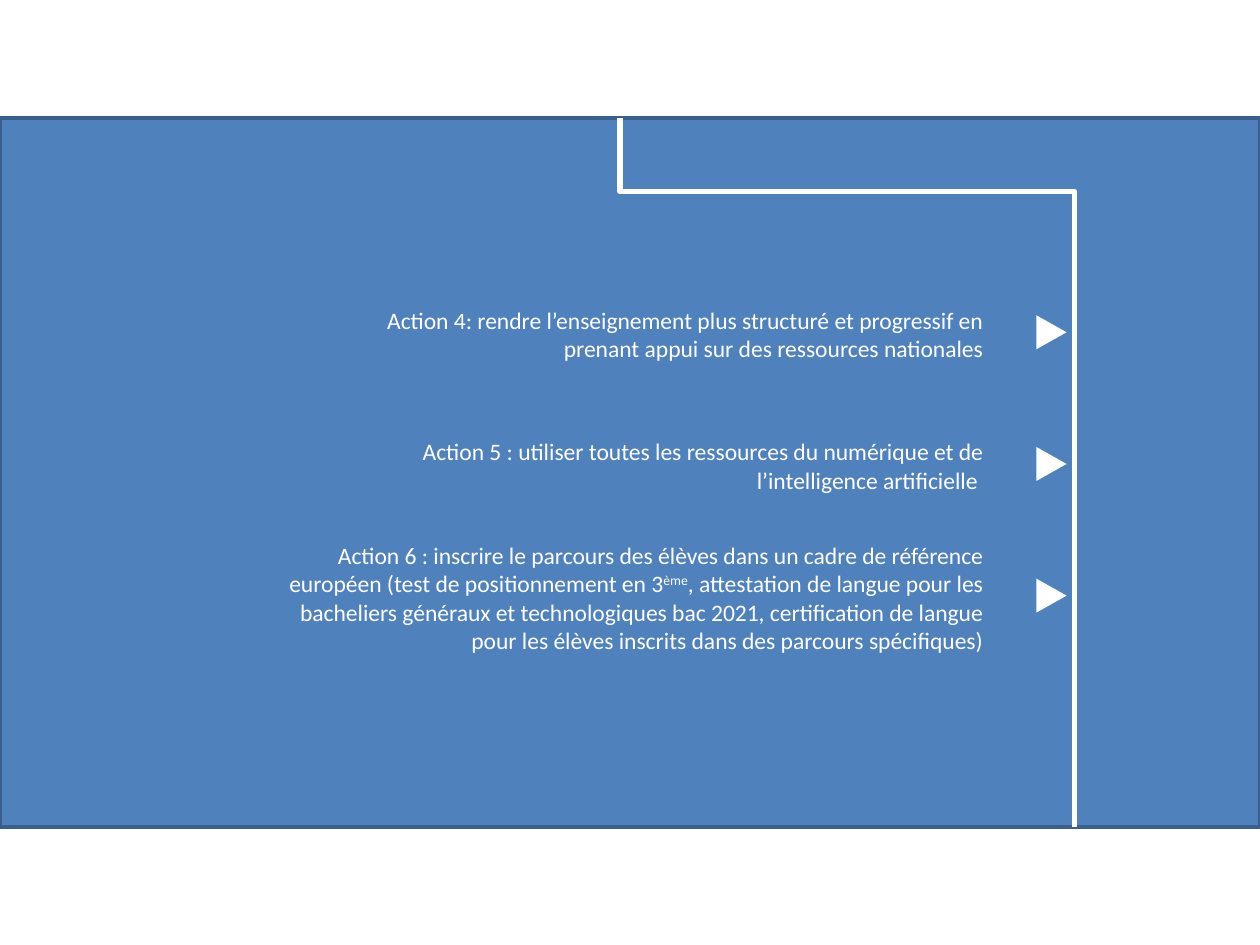
from dataclasses import dataclass

from lxml.etree import SubElement
from pptx import Presentation
from pptx.dml.color import RGBColor
from pptx.enum.shapes import MSO_CONNECTOR, MSO_SHAPE
from pptx.enum.text import MSO_AUTO_SIZE, PP_ALIGN
from pptx.oxml.ns import qn
from pptx.util import Inches, Pt


@dataclass(frozen=True)
class Theme:
    """Colours, font and sizes of the slide."""
    band: RGBColor = RGBColor(0x4F, 0x81, 0xBD)
    border: RGBColor = RGBColor(0x3A, 0x5F, 0x8C)
    light: RGBColor = RGBColor(0xFF, 0xFF, 0xFF)
    font: str = "Calibri"
    text_size: float = 13.5
    border_width: float = 2
    rail_width: float = 3


@dataclass(frozen=True)
class Box:
    """A region measured in grid columns and rows."""
    left: float
    top: float
    width: float
    height: float

    def inner(self, left, top, width, height):
        """Return a box placed relative to this one."""
        return Box(self.left + left, self.top + top, width, height)

    def lengths(self):
        """Return left, top, width and height as slide lengths."""
        return [cells(n) for n in (self.left, self.top, self.width, self.height)]


THEME = Theme()
COLUMNS, ROWS = 100, 75
BAND = Box(0, ROWS / 8, COLUMNS, ROWS * 3 / 4)
FIRST_ROW, ROW_PITCH = 17, 10.45
TEXT_RIGHT = 79
ACTIONS = [
    (50, 5.6, [("Action 4: rendre l’enseignement plus structuré et progressif en "
                "prenant appui sur des ressources nationales", False)]),
    (50, 5.6, [("Action 5 : utiliser toutes les ressources du numérique et de "
                "l’intelligence artificielle ", False)]),
    (58, 10.1, [("Action 6 : inscrire le parcours des élèves dans un cadre de référence "
                 "européen (test de positionnement en 3", False),
                ("ème", True),
                (", attestation de langue pour les bacheliers généraux et technologiques "
                 "bac 2021, certification de langue pour les élèves inscrits dans des "
                 "parcours spécifiques)", False)]),
]


def cells(count):
    """Convert grid cells, ten to the inch, to a slide length."""
    return Inches(count / 10)


def add_band(page, box):
    """Fill the box with the bordered background band."""
    band = page.shapes.add_shape(MSO_SHAPE.RECTANGLE, *box.lengths())
    band.shadow.inherit = False
    band.fill.solid()
    band.fill.fore_color.rgb = THEME.band
    band.line.color.rgb = THEME.border
    band.line.width = Pt(THEME.border_width)


def add_rail(page, box, bend):
    """Draw the elbow down the box, turning at the given share of its height."""
    middle_x, middle_y = box.left + box.width / 2, box.top + box.height / 2
    rail = page.shapes.add_connector(
        MSO_CONNECTOR.ELBOW,
        cells(middle_x + box.height / 2), cells(middle_y - box.width / 2),
        cells(middle_x - box.height / 2), cells(middle_y + box.width / 2))
    rail.line.color.rgb = THEME.light
    rail.line.width = Pt(THEME.rail_width)
    properties = rail._element.spPr
    properties.find(qn("a:xfrm")).set("rot", str(270 * 60000))
    guides = properties.find(qn("a:prstGeom")).find(qn("a:avLst"))
    SubElement(guides, qn("a:gd"), name="adj1", fmla=f"val {round(bend * 100000)}")
    SubElement(properties, qn("a:effectLst"))


def add_marker(page, box):
    """Place a triangle that points right to the rail."""
    marker = page.shapes.add_shape(MSO_SHAPE.FLOWCHART_EXTRACT, *box.lengths())
    marker.rotation = 90
    marker.shadow.inherit = False
    marker.fill.solid()
    marker.fill.fore_color.rgb = THEME.light
    marker.line.fill.background()


def add_action(page, box, spans):
    """Write one right-aligned action in the box."""
    frame = page.shapes.add_textbox(*box.lengths()).text_frame
    frame.word_wrap = True
    frame.auto_size = MSO_AUTO_SIZE.SHAPE_TO_FIT_TEXT
    para = frame.paragraphs[0]
    para.alignment = PP_ALIGN.RIGHT
    para.font.name = THEME.font
    para.font.size = Pt(THEME.text_size)
    para.font.color.rgb = THEME.light
    for text, raised in spans:
        span = para.add_run()
        span.text = text
        if raised:
            span._r.get_or_add_rPr().set("baseline", "30000")


def add_actions(page, box):
    """Stack the actions and their markers at equal steps in the box."""
    for index, (width, height, spans) in enumerate(ACTIONS):
        middle = FIRST_ROW + index * ROW_PITCH
        add_marker(page, box.inner(82.1, middle - 1.2, 2.7, 2.4))
        add_action(page, box.inner(TEXT_RIGHT - width, middle + 0.2 - height / 2,
                                   width, height), spans)


def main():
    """Build and save the deck."""
    deck = Presentation()
    deck.slide_width, deck.slide_height = cells(COLUMNS), cells(ROWS)
    page = deck.slides.add_slide(deck.slide_layouts[6])
    add_band(page, BAND)
    add_rail(page, BAND.inner(49.2, 0, 36.1, BAND.height), 0.104)
    add_actions(page, BAND)
    deck.save("out.pptx")


if __name__ == "__main__":
    main()
